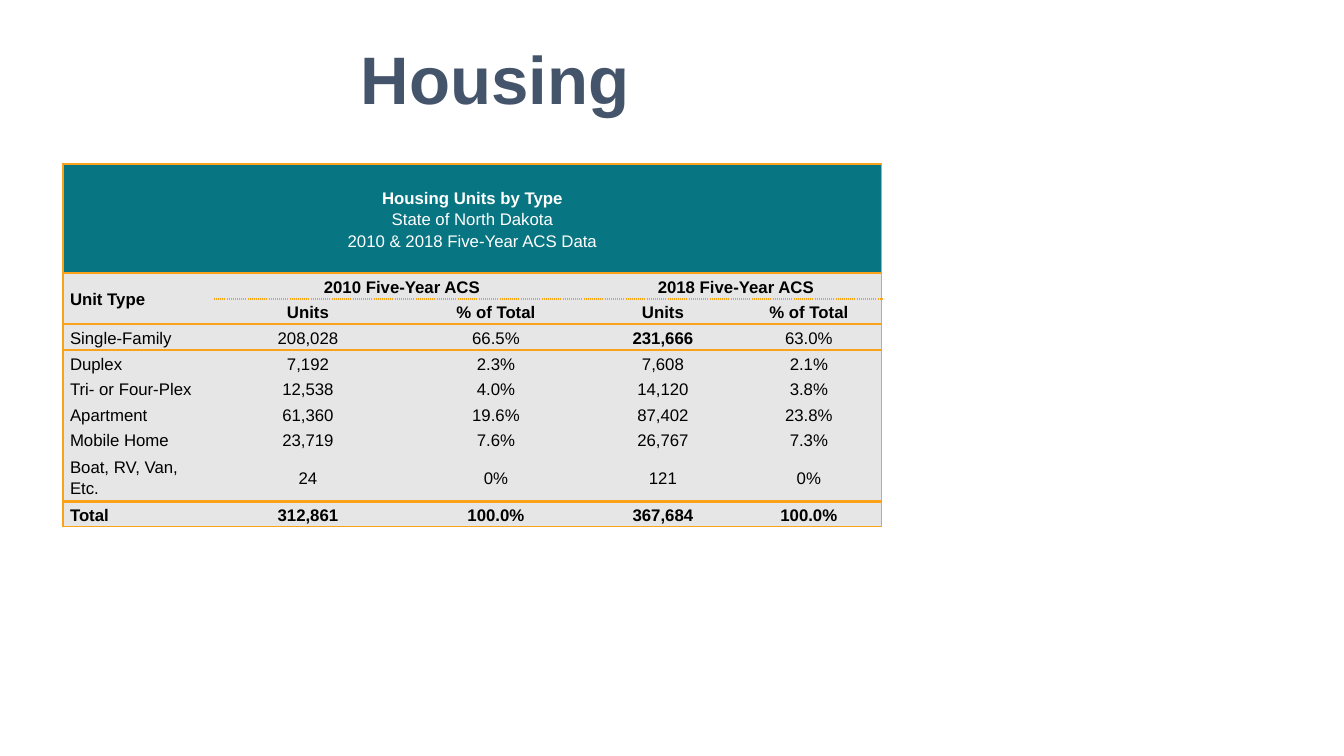
from lxml import etree
from pptx import Presentation
from pptx import util as u
from pptx.dml.color import RGBColor
from pptx.enum import text
from pptx.oxml import ns

TITLE = "Housing"
HEADING = ["Housing Units by Type", "State of North Dakota", "2010 & 2018 Five-Year ACS Data"]
ROWS = [
    ["\n".join(HEADING), "", "", "", ""],
    ["Unit Type", "2010 Five-Year ACS", "", "2018 Five-Year ACS", ""],
    ["", "Units", "% of Total", "Units", "% of Total"],
    ["Single-Family", "208,028", "66.5%", "231,666", "63.0%"],
    ["Duplex", "7,192", "2.3%", "7,608", "2.1%"],
    ["Tri- or Four-Plex", "12,538", "4.0%", "14,120", "3.8%"],
    ["Apartment", "61,360", "19.6%", "87,402", "23.8%"],
    ["Mobile Home", "23,719", "7.6%", "26,767", "7.3%"],
    ["Boat, RV, Van, Etc.", "24", "0%", "121", "0%"],
    ["Total", "312,861", "100.0%", "367,684", "100.0%"],
]
# Merged areas: first row, first column, last row, last column
MERGES = [(0, 0, 0, 4), (1, 0, 2, 0), (1, 1, 1, 2), (1, 3, 1, 4)]
BOLD_ROWS = (1, 2, 9)
BOLD_CELLS = [(3, 3)]
COLORS = {"title": "44546A", "header": "087582", "body": "E7E6E6",
          "rule": "FAA21A", "white": "FFFFFF", "black": "000000"}

# Lengths in px
SLIDE = (1344, 756)
TITLE_BOX = (28, 30, 934, 96)
TABLE_LEFT, TABLE_TOP = 63, 164
COLUMN_WIDTHS = [151, 188, 188, 146, 146]
ROW_HEIGHTS = [109, 26, 25, 26, 26, 25, 26, 25, 50, 25]
CELL_MARGIN = 7

# Horizontal rules below each row: width in points, dash; -1 is the top edge
THIN, DOTTED, THICK = (1, "solid"), (1, "dot"), (2.25, "solid")
RULES = {-1: THIN, 0: THIN, 1: DOTTED, 2: THIN, 8: THICK, 9: THIN}
NO_STYLE = "{2D5ABB26-0587-4C30-8999-92F81FD0307C}"


def px(length):
    return u.Emu(round(length * 914400 / 100.8))


def write(paragraph, words, size=12, color="black", bold=False, align="CENTER", spacing=1.15):
    paragraph.alignment = text.PP_ALIGN[align]
    paragraph.line_spacing = spacing
    run = paragraph.add_run()
    run.text = words
    run.font.name = "Arial"
    run.font.size = u.Pt(size)
    run.font.bold = bold
    run.font.color.rgb = RGBColor.from_string(COLORS[color])


def add_border(cell, side, rule):
    properties = cell._tc.get_or_add_tcPr()
    line = etree.SubElement(properties, ns.qn("a:ln" + side), w=str(u.Pt(rule[0])))
    fill = etree.SubElement(line, ns.qn("a:solidFill"))
    etree.SubElement(fill, ns.qn("a:srgbClr"), val=COLORS["rule"])
    etree.SubElement(line, ns.qn("a:prstDash"), val=rule[1])


presentation = Presentation()
presentation.slide_width, presentation.slide_height = map(px, SLIDE)
slide = presentation.slides.add_slide(presentation.slide_layouts[5])

# Title
title = slide.shapes.title
title.left, title.top, title.width, title.height = map(px, TITLE_BOX)
title.text_frame.vertical_anchor = text.MSO_ANCHOR.MIDDLE
write(title.text_frame.paragraphs[0], TITLE, size=48, color="title", bold=True, spacing=1.0)

# Table grid
frame = slide.shapes.add_table(
    len(ROWS), len(COLUMN_WIDTHS), px(TABLE_LEFT), px(TABLE_TOP),
    px(sum(COLUMN_WIDTHS)), px(sum(ROW_HEIGHTS)))
table = frame.table
table.first_row = table.horz_banding = False
table._tbl.tblPr.find(ns.qn("a:tableStyleId")).text = NO_STYLE
for column, width in zip(table.columns, COLUMN_WIDTHS):
    column.width = px(width)
for table_row, height in zip(table.rows, ROW_HEIGHTS):
    table_row.height = px(height)
for top, left, bottom, right in MERGES:
    table.cell(top, left).merge(table.cell(bottom, right))

# Table cells
for row, values in enumerate(ROWS):
    for col, value in enumerate(values):
        cell = table.cell(row, col)
        if cell.is_spanned:
            continue
        last_row = row + (cell.span_height if cell.is_merge_origin else 1) - 1
        last_col = col + (cell.span_width if cell.is_merge_origin else 1) - 1
        borders = {
            "L": THIN if col == 0 else None,
            "R": THIN if last_col == len(values) - 1 else None,
            "T": RULES.get(row - 1),
            "B": RULES.get(last_row),
        }
        for side, rule in borders.items():
            if rule:
                add_border(cell, side, rule)

        cell.fill.solid()
        cell.fill.fore_color.rgb = RGBColor.from_string(COLORS["body" if row else "header"])
        cell.vertical_anchor = text.MSO_ANCHOR.MIDDLE
        cell.margin_left = cell.margin_right = px(CELL_MARGIN)
        cell.margin_top = cell.margin_bottom = 0

        for index, words in enumerate(value.split("\n")):
            body = cell.text_frame
            paragraph = body.add_paragraph() if index else body.paragraphs[0]
            heading_line = row == 0 and index == 0
            write(paragraph, words,
                  color="black" if row else "white",
                  bold=heading_line or row in BOLD_ROWS or (row, col) in BOLD_CELLS,
                  align="LEFT" if row and col == 0 else "CENTER")

presentation.save("out.pptx")
